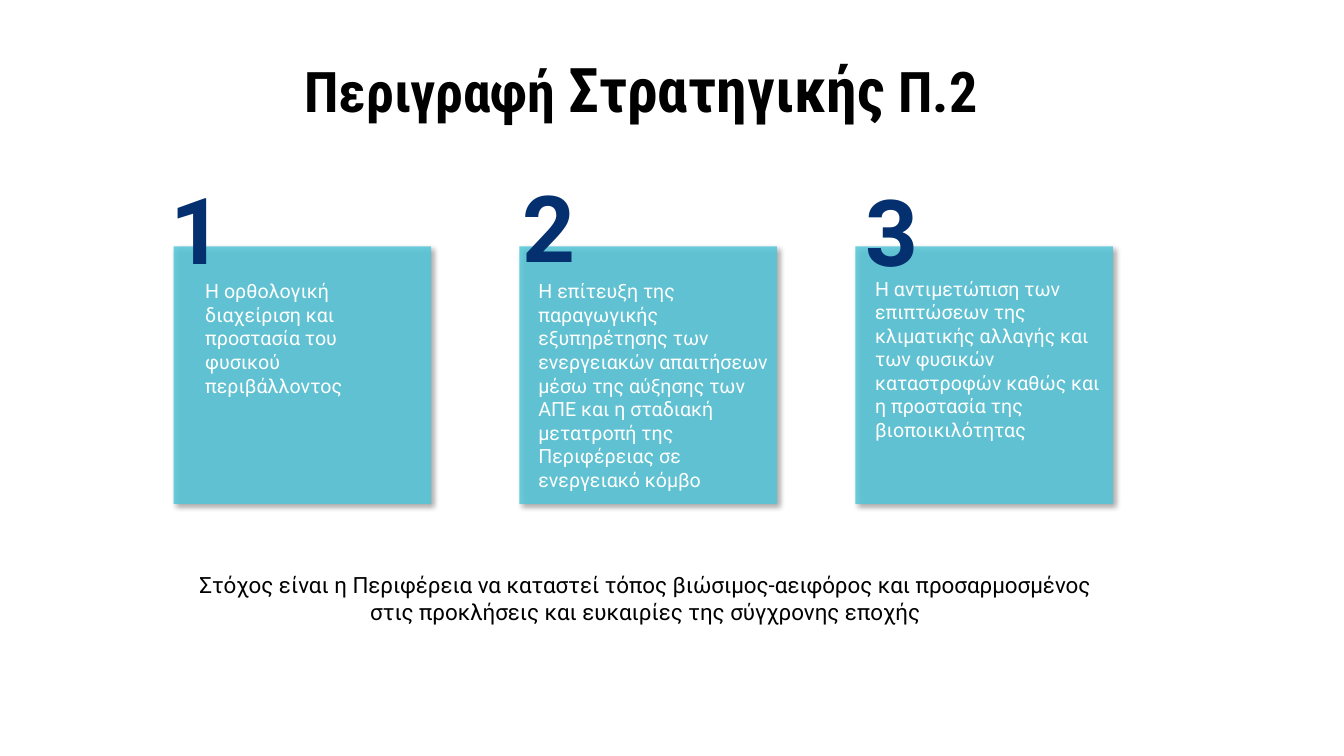
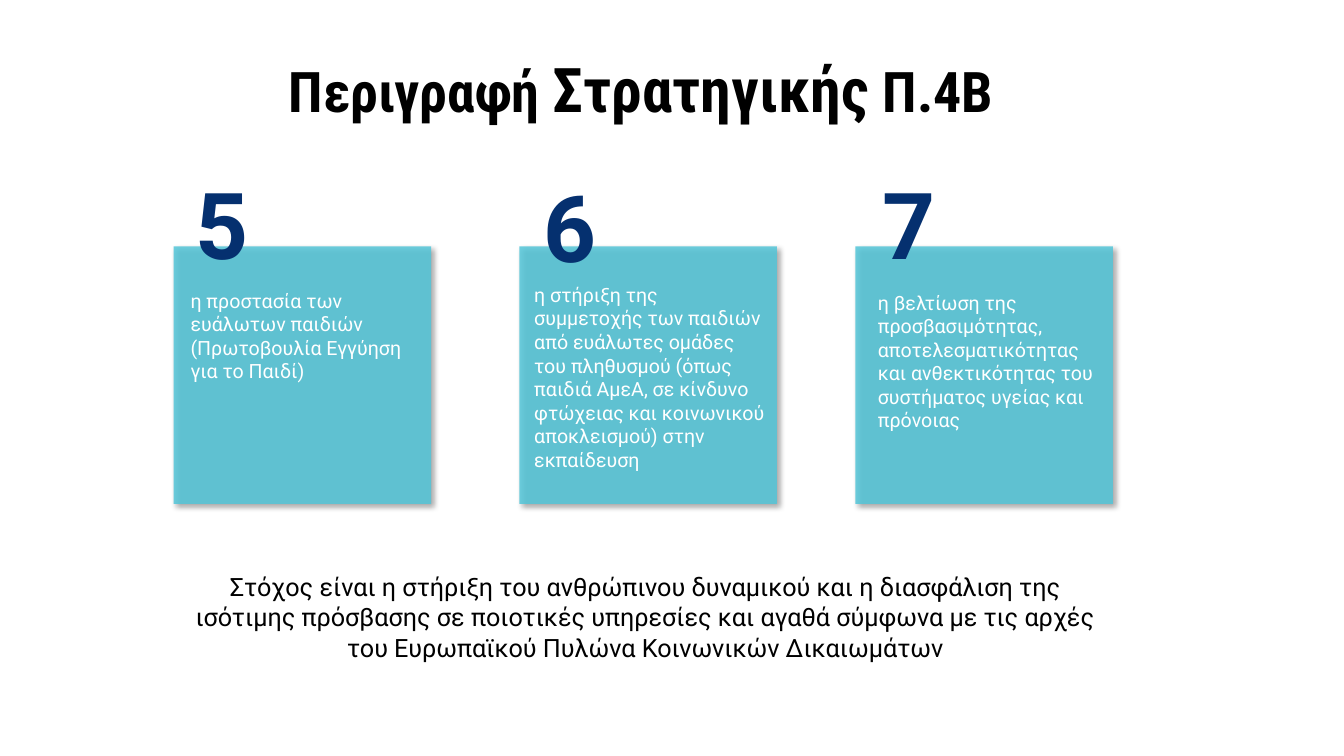
from pptx import Presentation
from pptx.dml.color import RGBColor
from pptx.enum.shapes import MSO_SHAPE
from pptx.enum.text import MSO_ANCHOR, MSO_AUTO_SIZE, PP_ALIGN
from pptx.oxml import parse_xml
from pptx.oxml.ns import nsdecls
from pptx.oxml.xmlchemy import OxmlElement
from pptx.util import Pt
from dataclasses import dataclass


# Colours and type sizes
@dataclass(frozen=True)
class Theme:
    black: str = "000000"
    white: str = "FFFFFF"
    navy: str = "05306F"
    aqua: str = "52C6D9"
    head: str = "Roboto Condensed"
    text: str = "Roboto"
    title: int = 40
    stress: int = 44
    digit: int = 66
    card: int = 14


T = Theme()

STYLES = {
    "title": ({"name": T.head, "bold": True}, T.black),
    "digit": ({"name": T.text, "size": Pt(T.digit), "bold": True}, T.navy),
    "card": ({"name": T.text, "size": Pt(T.card)}, T.white),
    "goal": ({"name": T.text}, T.black),
}
FRAME = {"word_wrap": True, "auto_size": MSO_AUTO_SIZE.NONE,
         "vertical_anchor": MSO_ANCHOR.TOP}

# Card grid: left edges, shared top and side
LEFTS = (124, 371, 611)
TOP, SIDE = 176, 184

# Card: digit, digit offset, text, text offset and width
SLIDES = (
    {"name": "Π.2", "size": 16,
     "goal": "Στόχος είναι η Περιφέρεια να καταστεί τόπος βιώσιμος-αειφόρος "
             "και προσαρμοσμένος στις προκλήσεις και ευκαιρίες της σύγχρονης "
             "εποχής",
     "cards": (
         ("1", (-9, -56.5),
          "Η ορθολογική διαχείριση και προστασία του φυσικού περιβάλλοντος",
          (15.5, 20, 165)),
         ("2", (-4.5, -58),
          "Η επίτευξη της παραγωγικής εξυπηρέτησης των ενεργειακών απαιτήσεων "
          "μέσω της αύξησης των ΑΠΕ και η σταδιακή μετατροπή της Περιφέρειας "
          "σε ενεργειακό κόμβο", (6.5, 20, 184)),
         ("3", (0, -55),
          "Η αντιμετώπιση των επιπτώσεων της κλιματικής αλλαγής και των "
          "φυσικών καταστροφών καθώς και η προστασία της βιοποικιλότητας",
          (7, 18, 181)))},
    {"name": "Π.4Β", "size": 18,
     "goal": "Στόχος είναι η στήριξη του ανθρώπινου δυναμικού και η διασφάλιση "
             "της ισότιμης πρόσβασης σε ποιοτικές υπηρεσίες και αγαθά σύμφωνα "
             "με τις αρχές του Ευρωπαϊκού Πυλώνα Κοινωνικών Δικαιωμάτων",
     "cards": (
         ("5", (8.5, -60),
          "η προστασία των ευάλωτων παιδιών (Πρωτοβουλία Εγγύηση για το Παιδί)",
          (5, 26.5, 165)),
         ("6", (10.5, -58),
          "η στήριξη της συμμετοχής των παιδιών από ευάλωτες ομάδες του "
          "πληθυσμού (όπως παιδιά ΑμεΑ, σε κίνδυνο φτώχειας και κοινωνικού "
          "αποκλεισμού) στην εκπαίδευση", (3.5, 22.5, 182)),
         ("7", (12, -60),
          "η βελτίωση της προσβασιμότητας, αποτελεσματικότητας και "
          "ανθεκτικότητας του συστήματος υγείας και πρόνοιας",
          (9, 28, 171)))},
)


def apply(item, values):
    for key, value in values.items():
        setattr(item, key, value)


def write(shape, style, runs, align=PP_ALIGN.LEFT):
    """Fill a shape with one paragraph of (text, size) runs."""
    apply(shape.text_frame, FRAME)
    para = shape.text_frame.paragraphs[0]
    apply(para, {"alignment": align, "space_before": Pt(0)})
    values, color = STYLES[style]
    for text, size in runs:
        run = para.add_run()
        run.text = text
        apply(run.font, {**values, "size": Pt(size)})
        run.font.color.rgb = RGBColor.from_string(color)
    return para


def place(shape, *box):
    apply(shape, dict(zip(("left", "top", "width", "height"), map(Pt, box))))


def add_text(slide, style, text, size, *box):
    shape = slide.shapes.add_textbox(*map(Pt, box))
    write(shape, style, [(text, size)])


def add_card(slide, left):
    card = slide.shapes.add_shape(
        MSO_SHAPE.RECTANGLE, *map(Pt, (left, TOP, SIDE, SIDE)))
    card.fill.solid()
    card.fill.fore_color.rgb = RGBColor.from_string(T.aqua)
    card.line.fill.background()
    # Translucent fill and soft shadow
    props = card._element.spPr
    alpha = OxmlElement("a:alpha")
    alpha.set("val", "84000")
    props.find(".//{*}solidFill/{*}srgbClr").append(alpha)
    props.append(parse_xml(
        f'<a:effectLst {nsdecls("a")}><a:outerShdw blurRad="{Pt(4)}" '
        f'dist="{Pt(3)}" dir="2700000" algn="tl" rotWithShape="0">'
        f'<a:srgbClr val="{T.black}"><a:alpha val="40000"/></a:srgbClr>'
        '</a:outerShdw></a:effectLst>'))


def add_title(slide, name):
    title = slide.shapes.title
    place(title, 192, 32.5, 541, 60)
    write(title, "title", [("Περιγραφή ", T.title), ("Στρατηγικής", T.stress),
                           (f" {name} ", T.title)], PP_ALIGN.CENTER)


def add_goal(slide, text, size):
    body = slide.placeholders[1]
    place(body, 124, 404.5, 674, 100)
    para = write(body, "goal", [(text, size)], PP_ALIGN.CENTER)
    # No bullet or indent
    props = para._p.get_or_add_pPr()
    apply(props, {"algn": PP_ALIGN.CENTER})
    for key in ("marL", "indent"):
        props.set(key, "0")
    props.append(OxmlElement("a:buNone"))


def add_slide(deck, data):
    slide = deck.slides.add_slide(deck.slide_layouts[1])
    add_title(slide, data["name"])
    add_goal(slide, data["goal"], data["size"])
    for left in LEFTS:
        add_card(slide, left)
    for left, (digit, spot, text, area) in zip(LEFTS, data["cards"]):
        dx, dy, wide = area
        add_text(slide, "card", text, T.card, left + dx, TOP + dy, wide, 160)
        dx, dy = spot
        add_text(slide, "digit", digit, T.digit, left + dx, TOP + dy, 78, 87)


def main():
    deck = Presentation()
    apply(deck, {"slide_width": Pt(960), "slide_height": Pt(540)})
    for data in SLIDES:
        add_slide(deck, data)
    deck.save("out.pptx")


if __name__ == "__main__":
    main()
